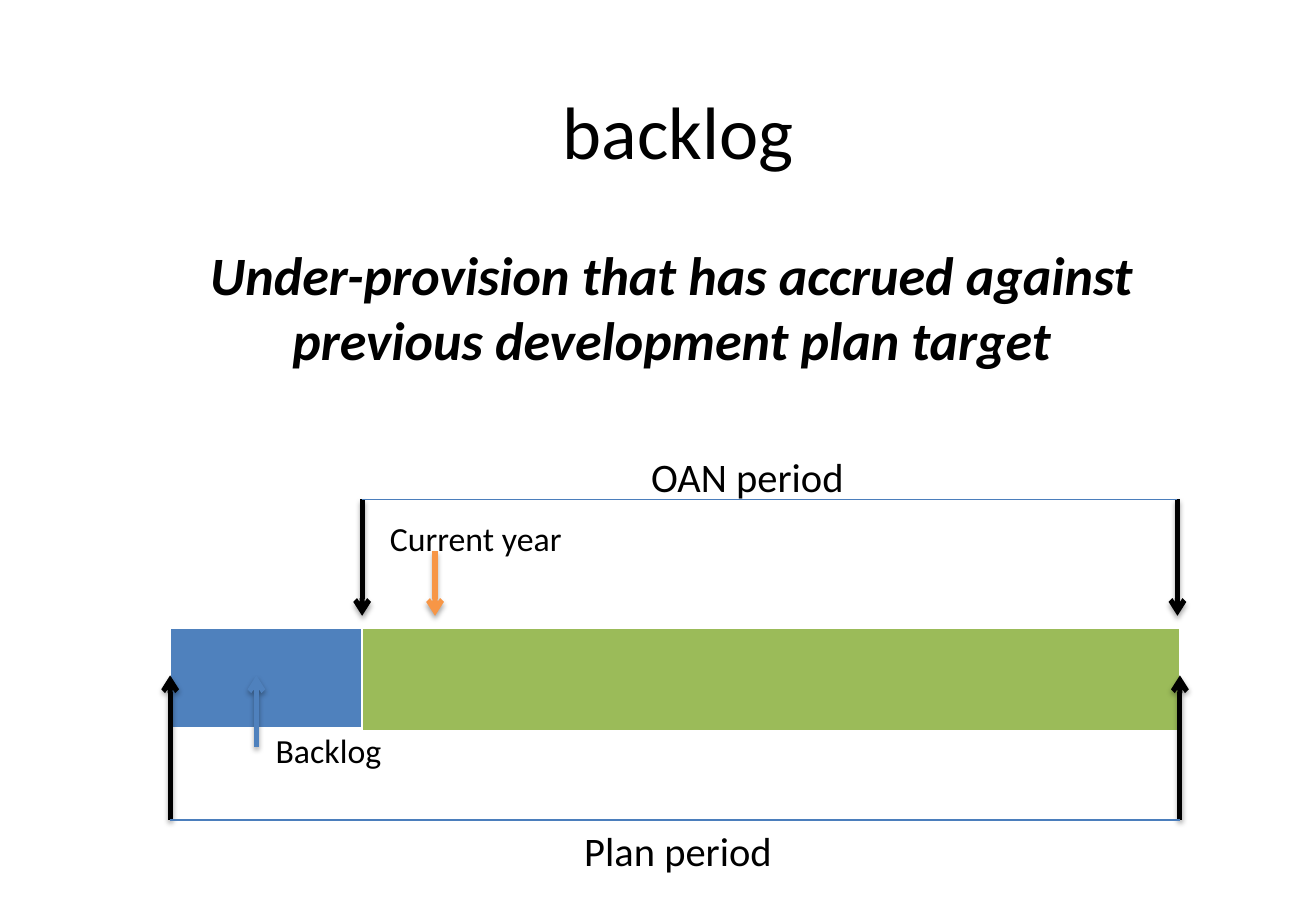
import lxml.etree
import pptx
import pptx.dml.color
import pptx.enum.shapes
import pptx.enum.text
import pptx.oxml
import pptx.oxml.ns
import pptx.util

# Content
TITLE = "backlog"
DEFINITION = "Under-provision that has accrued against previous development plan target"
BLACK, WHITE, BLUE, GREEN, ORANGE = "000000", "FFFFFF", "4F81BD", "9BBB59", "F79646"
SPAN_BLUE = "4B7EBC"
FONT = "Calibri"

# Timeline grid, in inches: named columns and rows
COLUMN = {"plan start": 1.4, "backlog": 2.11, "oan start": 2.98,
          "current year": 3.58, "oan end": 9.69, "plan end": 9.71}
ROW = {"oan span": 4.11, "current year": 4.54, "above bar": 5.07, "bar": 5.17,
       "inside bar": 5.56, "below bar": 6.15, "plan span": 6.75}

# Bars: first column, last column, height, fill
BARS = [("oan start", "plan end", 0.86, GREEN),
        ("plan start", "oan start", 0.83, BLUE)]

# Markers: label, label box, text size, arrow columns, from row, to row, colour
MARKERS = [
    ("OAN period", (5.26, 3.67, 3.7, 0.5), 24,
     ("oan start", "oan end"), "oan span", "above bar", BLACK),
    ("Plan period", (4.71, 6.75, 2.13, 0.5), 24,
     ("plan start", "plan end"), "plan span", "inside bar", BLACK),
    ("Backlog", (2.17, 5.96, 1.85, 0.44), 20,
     ("backlog",), "below bar", "inside bar", BLUE),
    ("Current year", (3.11, 4.21, 2.54, 0.44), 20,
     ("current year",), "current year", "above bar", ORANGE),
]

NAMESPACE = pptx.oxml.ns.nsdecls("a")
ARROWHEAD = f'<a:tailEnd {NAMESPACE} type="arrow"/>'
NO_EFFECT = f"<a:effectLst {NAMESPACE}/>"
SHADOW = (f'<a:effectLst {NAMESPACE}><a:outerShdw blurRad="39370" dist="22860" dir="5400000" '
          'rotWithShape="0"><a:srgbClr val="000000"><a:alpha val="35000"/></a:srgbClr>'
          "</a:outerShdw></a:effectLst>")


def colour(value):
    return pptx.dml.color.RGBColor.from_string(value)


def inches(*lengths):
    return [pptx.util.Inches(length) for length in lengths]


def write(shape, text, size, alignment="LEFT", **formats):
    frame = shape.text_frame
    frame.word_wrap = True
    paragraph = frame.paragraphs[0]
    paragraph.alignment = getattr(pptx.enum.text.PP_ALIGN, alignment)
    run = paragraph.add_run()
    run.text = text
    run.font.color.rgb = colour(BLACK)
    for name, value in {"name": FONT, "size": pptx.util.Pt(size), **formats}.items():
        setattr(run.font, name, value)


def add_line(shapes, start, end, line_colour, width, arrow=False):
    connector = shapes.add_connector(
        pptx.enum.shapes.MSO_CONNECTOR.STRAIGHT, *inches(*start, *end))
    connector.line.color.rgb = colour(line_colour)
    connector.line.width = pptx.util.Pt(width)
    if arrow:
        connector.line._get_or_add_ln().append(pptx.oxml.parse_xml(ARROWHEAD))
    properties = connector._element.spPr
    properties.append(pptx.oxml.parse_xml(SHADOW if arrow else NO_EFFECT))


def add_bar(slide, first, last, height, fill):
    left, width = COLUMN[first], COLUMN[last] - COLUMN[first]
    table = slide.shapes.add_table(1, 1, *inches(left, ROW["bar"], width, height)).table
    cell = table.cell(0, 0)
    properties = cell._tc.get_or_add_tcPr()
    for side, points in (("lnL", 1), ("lnR", 1), ("lnT", 1), ("lnB", 3)):
        properties.append(pptx.oxml.parse_xml(
            f'<a:{side} {NAMESPACE} w="{pptx.util.Pt(points)}"><a:solidFill>'
            f'<a:srgbClr val="{WHITE}"/></a:solidFill></a:{side}>'))
    cell.fill.solid()
    cell.fill.fore_color.rgb = colour(fill)


def add_marker(slide, label, box, size, columns, start, end, arrow_colour):
    shapes = slide.shapes.add_group_shape().shapes
    positions = [COLUMN[name] for name in columns]
    for x in positions:
        add_line(shapes, (x, ROW[start]), (x, ROW[end]), arrow_colour, 3, arrow=True)
    if len(positions) == 2:
        first, last = positions
        add_line(shapes, (first, ROW[start]), (last, ROW[start]), SPAN_BLUE, 0.75)
    write(shapes.add_textbox(*inches(*box)), label, size)


def main():
    presentation = pptx.Presentation()
    presentation.slide_width, presentation.slide_height = inches(10.83, 7.5)
    slide = presentation.slides.add_slide(presentation.slide_layouts[5])

    # Title and definition
    title = slide.shapes.title
    title.left, title.top, title.width, title.height = inches(1.72, 0.52, 7.72, 1.1)
    title.text_frame.vertical_anchor = pptx.enum.text.MSO_ANCHOR.MIDDLE
    write(title, TITLE, 44, "CENTER")
    definition = slide.shapes.add_textbox(*inches(0.84, 1.94, 9.38, 1.3))
    write(definition, DEFINITION, 32, "CENTER", bold=True, italic=True)

    # Timeline
    for bar in BARS:
        add_bar(slide, *bar)
    for marker in MARKERS:
        add_marker(slide, *marker)

    presentation.save("out.pptx")


if __name__ == "__main__":
    main()
